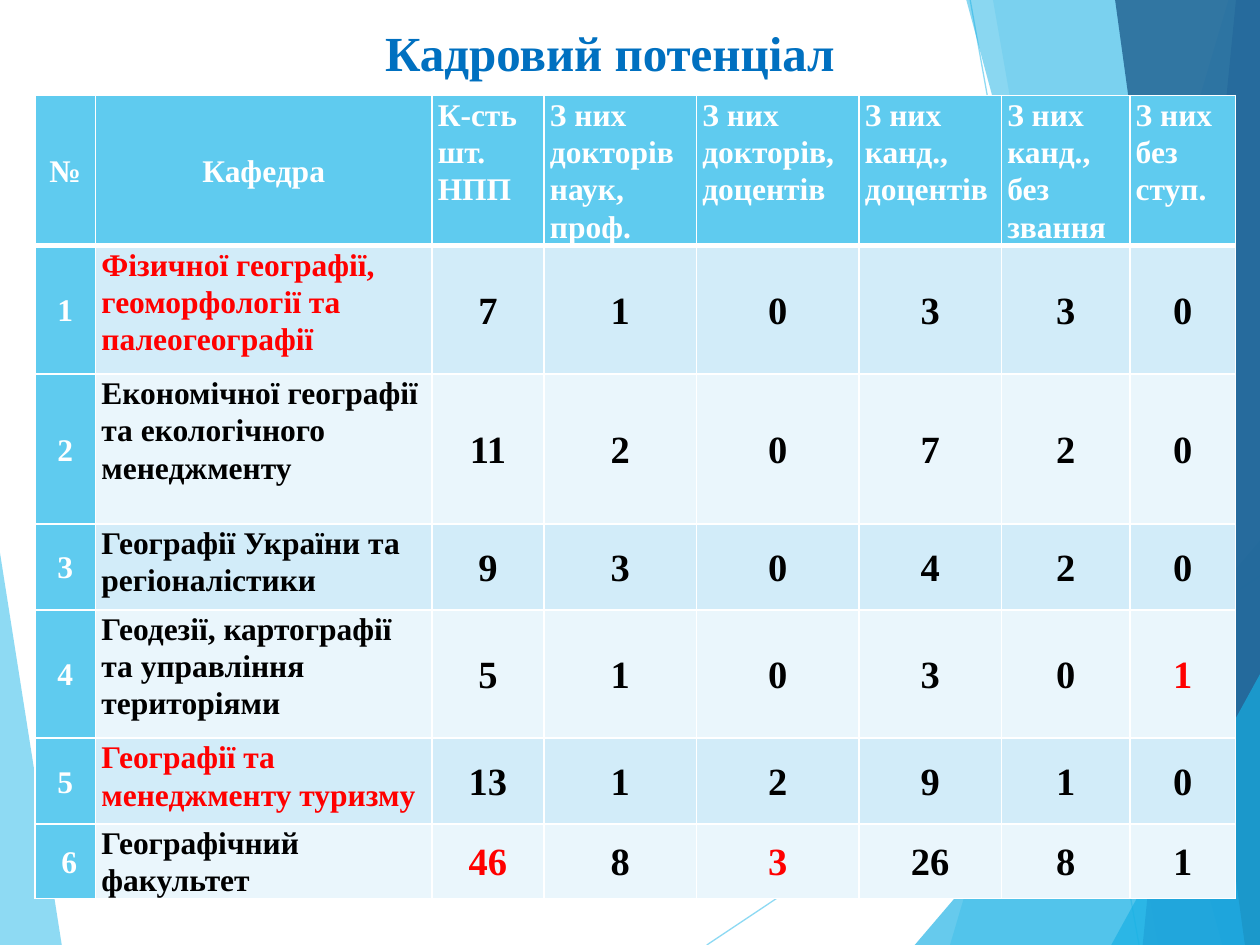
from dataclasses import dataclass

from lxml.etree import SubElement
from pptx import Presentation
from pptx.dml.color import RGBColor as RGB
from pptx.enum.shapes import MSO_CONNECTOR as Conn
from pptx.enum.text import MSO_ANCHOR as Anchor, MSO_AUTO_SIZE as Fit, PP_ALIGN as Align
from pptx.oxml.ns import qn
from pptx.util import Pt


@dataclass(frozen=True)
class Theme:
    font: str = "Times New Roman"
    title: str = "0070C0"
    sky: str = "5FCBEF"
    aqua: str = "17B0E4"
    blue: str = "2E83C3"
    navy: str = "226292"
    bands: tuple = ("D2ECF9", "EAF6FC")
    white: str = "FFFFFF"
    black: str = "000000"
    red: str = "FF0000"
    head_size: int = 28
    text_size: int = 18
    num_size: int = 22


THEME = Theme()
WIDE, HIGH = 720, 540

# Corners, colour and opacity in percent, from back to front
FACETS = [
    ([(0, 316), (35.3, HIGH), (0, HIGH)], THEME.sky, 70),
    ([(702, 0), (542.9, HIGH), (WIDE, HIGH), (WIDE, 0)], THEME.sky, 36),
    ([(567.4, 0), (661.7, HIGH), (WIDE, HIGH), (WIDE, 0)], THEME.sky, 20),
    ([(522.7, HIGH), (WIDE, 308.9), (WIDE, HIGH)], THEME.aqua, 66),
    ([(552.2, 0), (698.4, HIGH), (WIDE, HIGH), (WIDE, 0)], THEME.aqua, 50),
    ([(706.3, 0), (653, HIGH), (WIDE, HIGH), (WIDE, 0)], THEME.blue, 70),
    ([(637.2, 0), (711.4, HIGH), (WIDE, HIGH), (WIDE, 0)], THEME.navy, 82),
    ([(635, HIGH), (WIDE, 385.2), (WIDE, HIGH)], THEME.aqua, 66),
]
RAYS = [((403.9, HIGH), (WIDE, 329)), ((554.4, 0), (650.9, HIGH))]

COLS = [34.6, 192.2, 64.1, 87.1, 92.9, 81.4, 73.4, 60.5]
ROWS = [85.7, 73.4, 85.7, 49, 73.4, 49, 36.7]
HEADS = ["№", "Кафедра", "К-сть шт. НПП", "З них докторів наук, проф.",
         "З них докторів,\nдоцентів", "З них канд.,\nдоцентів",
         "З них канд.,\nбез звання", "З них без ступ."]
STAFF = [
    ["1", "Фізичної географії, геоморфології та палеогеографії", 7, 1, 0, 3, 3, 0],
    ["2", "Економічної географії та екологічного менеджменту", 11, 2, 0, 7, 2, 0],
    ["3", "Географії України та регіоналістики", 9, 3, 0, 4, 2, 0],
    ["4", "Геодезії, картографії та управління територіями", 5, 1, 0, 3, 0, 1],
    ["5", "Географії та менеджменту туризму", 13, 1, 2, 9, 1, 0],
    [" 6", "Географічний факультет", 46, 8, 3, 26, 8, 1],
]
MARKED = {(1, 1), (4, 7), (5, 1), (6, 2), (6, 4)}


def fade(shape, alpha):
    for color in shape.element.spPr.iter(qn("a:srgbClr")):
        SubElement(color, qn("a:alpha"), val=str(alpha * 1000))


def style(frame, size, color, align, space=1.0):
    for para in frame.paragraphs:
        para.alignment, para.line_spacing = align, space
        for run in para.runs:
            form = {"name": THEME.font, "size": Pt(size), "bold": True}
            for key, value in form.items():
                setattr(run.font, key, value)
            run.font.color.rgb = RGB.from_string(color)


def add_facet(shapes, left, top, points, color, alpha):
    (x, y), *rest = [(Pt(left + x), Pt(top + y)) for x, y in points]
    pen = shapes.build_freeform(x, y)
    pen.add_line_segments(rest, close=True)
    facet = pen.convert_to_shape()
    facet.shadow.inherit = False
    facet.fill.solid()
    facet.fill.fore_color.rgb = RGB.from_string(color)
    facet.line.fill.background()
    fade(facet, alpha)


def add_ray(shapes, left, top, start, end):
    ends = [Pt(a + b) for point in (start, end) for a, b in zip((left, top), point)]
    ray = shapes.add_connector(Conn.STRAIGHT, *ends)
    ray.line.width = Pt(0.75)
    ray.line.color.rgb = RGB.from_string(THEME.sky)
    fade(ray, 70)
    SubElement(ray.element.spPr, qn("a:effectLst"))


def add_backdrop(slide, left, top):
    shapes = slide.shapes.add_group_shape().shapes
    add_facet(shapes, left, top, *FACETS[0])
    for ray in RAYS:
        add_ray(shapes, left, top, *ray)
    for facet in FACETS[1:]:
        add_facet(shapes, left, top, *facet)


def add_title(slide, left, top, width, height):
    title = slide.shapes.title
    box = {"left": left, "top": top, "width": width, "height": height}
    for key, value in box.items():
        setattr(title, key, Pt(value))
    frame = title.text_frame
    frame.text = "Кадровий потенціал"
    frame.auto_size, frame.word_wrap = Fit.NONE, True
    frame.vertical_anchor = Anchor.MIDDLE
    style(frame, THEME.head_size, THEME.title, Align.CENTER)


def edge_cell(cell, row):
    """Draw white borders, with a thick rule under the header."""
    props = cell._tc.get_or_add_tcPr()
    thick = {"lnT": row == 1, "lnB": row == 0}
    for side in ("lnL", "lnR", "lnT", "lnB"):
        width = Pt(3 if thick.get(side) else 1)
        line = SubElement(props, qn(f"a:{side}"), w=str(width))
        fill = SubElement(line, qn("a:solidFill"))
        SubElement(fill, qn("a:srgbClr"), val=THEME.white)


def fill_cell(cell, row, col, value):
    header = row == 0 or col == 0
    centred = col == 0 or (col == 1 if row == 0 else col > 1)
    size = THEME.num_size if row and col > 1 else THEME.text_size
    if header:
        ink, fill = THEME.white, THEME.sky
    else:
        ink = THEME.red if (row, col) in MARKED else THEME.black
        fill = THEME.bands[(row - 1) % 2]
    edge_cell(cell, row)
    cell.fill.solid()
    cell.fill.fore_color.rgb = RGB.from_string(fill)
    form = {"margin_left": Pt(3.4), "margin_right": Pt(3.4),
            "margin_top": 0, "margin_bottom": 0,
            "vertical_anchor": Anchor.MIDDLE if centred else Anchor.TOP}
    for key, item in form.items():
        setattr(cell, key, item)
    cell.text_frame.text = str(value)
    style(cell.text_frame, size, ink, Align.CENTER if centred else Align.LEFT, 1.07)


def add_staff(slide, left, top):
    box = [Pt(n) for n in (left, top, sum(COLS), sum(ROWS))]
    table = slide.shapes.add_table(len(ROWS), len(COLS), *box).table
    for col, width in zip(table.columns, COLS):
        col.width = Pt(width)
    for line, height in zip(table.rows, ROWS):
        line.height = Pt(height)
    for row, values in enumerate([HEADS, *STAFF]):
        for col, value in enumerate(values):
            fill_cell(table.cell(row, col), row, col, value)


def main():
    deck = Presentation()
    deck.slide_width, deck.slide_height = Pt(WIDE), Pt(HIGH)
    slide = deck.slides.add_slide(deck.slide_layouts[5])
    add_backdrop(slide, 0, 0)
    add_title(slide, 172.8, 9.4, 351.4, 41)
    add_staff(slide, 20, 54.7)
    deck.save("out.pptx")


if __name__ == "__main__":
    main()
